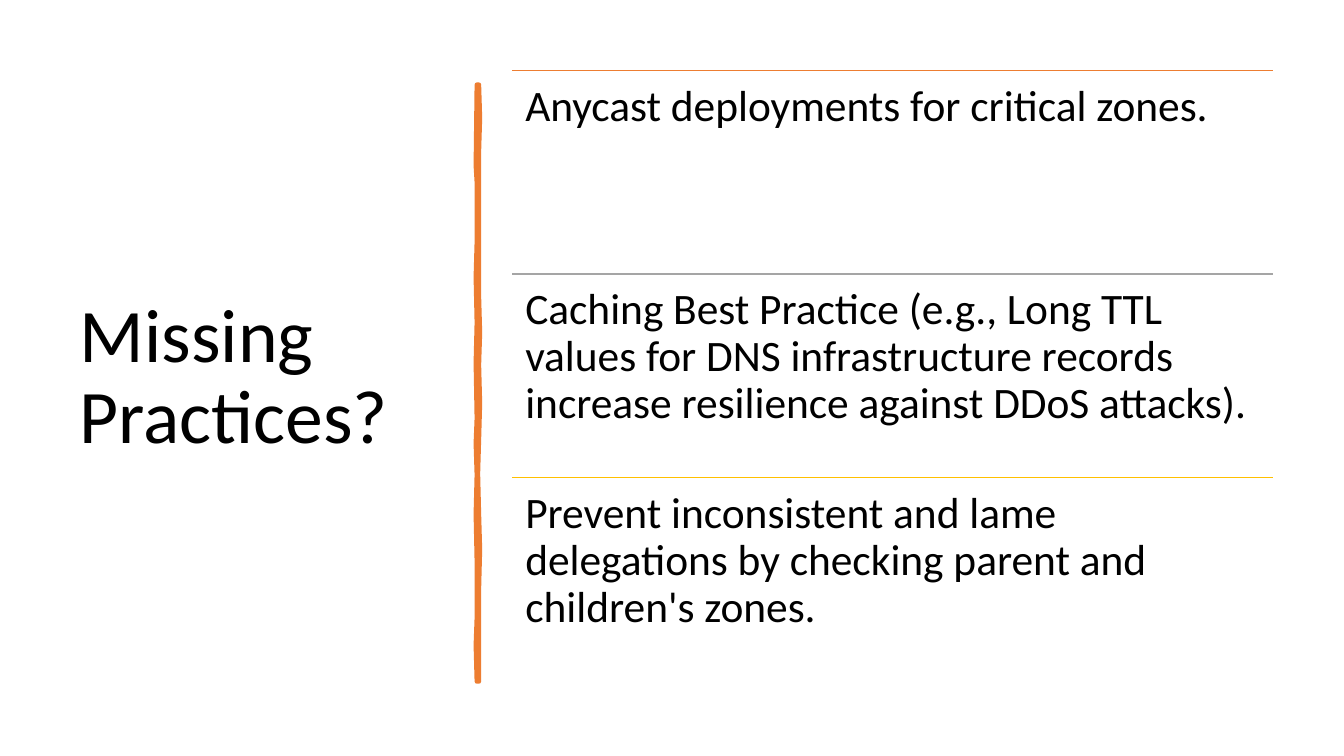
"""Build the Missing Practices slide with three ruled statements."""
from dataclasses import dataclass

from lxml import etree
from pptx import Presentation
from pptx.dml.color import RGBColor
from pptx.enum import shapes, text
from pptx.oxml import ns
from pptx.util import Inches, Pt

TITLE = "Missing Practices?"
PRACTICES = [
    ("Anycast deployments for critical zones.", "ED7D31"),
    ("Caching Best Practice (e.g., Long TTL values for DNS infrastructure records "
     "increase resilience against DDoS attacks).", "A5A5A5"),
    ("Prevent inconsistent and lame delegations by checking parent and "
     "children's zones.", "FFC000"),
]
RIGHT_EDGE = [(4.75, 0.84), (4.76, 1.17), (4.75, 1.5), (4.75, 2.26), (4.75, 2.94),
              (4.76, 3.3), (4.75, 3.62), (4.76, 4), (4.75, 4.36), (4.74, 4.7),
              (4.75, 5.1), (4.76, 5.45), (4.75, 5.84), (4.75, 6.76)]
LEFT_EDGE = [(4.73, 6.76), (4.72, 6.4), (4.73, 6.13), (4.73, 5.57), (4.72, 5.1),
             (4.73, 4.71), (4.72, 4.4), (4.73, 4.15), (4.72, 3.6), (4.73, 3.2),
             (4.72, 2.75), (4.73, 2.4), (4.73, 1.81), (4.72, 1.64), (4.73, 0.84)]


@dataclass(frozen=True)
class Theme:
    """Colours, font and type sizes."""
    font: str = "Calibri"
    ink: str = "000000"
    accent: str = "ED7D31"
    title_size: int = 54
    body_size: int = 31
    brush_width: float = 3.25
    rule_width: float = 1


THEME = Theme()
LIST_LEFT, LIST_TOP, LIST_WIDTH, ROW_HEIGHT = 5.08, 0.7, 7.55, 2.02
INSET = 0.13


def write(box, words, size, anchor):
    """Put one styled paragraph into a box."""
    frame = box.text_frame
    frame.text = words
    frame.word_wrap = True
    frame.auto_size = text.MSO_AUTO_SIZE.NONE
    frame.vertical_anchor = anchor
    para = frame.paragraphs[0]
    para.alignment = text.PP_ALIGN.LEFT
    para.line_spacing = 0.9
    font = para.runs[0].font
    font.name, font.size = THEME.font, Pt(size)
    font.color.rgb = RGBColor.from_string(THEME.ink)


def add_title(page):
    """Place the slide title at the left."""
    title = page.shapes.title
    title.left, title.top = Inches(0.69), Inches(0.7)
    title.width, title.height = Inches(3.74), Inches(6.11)
    write(title, TITLE, THEME.title_size, text.MSO_ANCHOR.MIDDLE)


def add_brush_stroke(page):
    """Draw the uneven vertical divider."""
    points = [(round(x * 100), round(y * 100)) for x, y in RIGHT_EDGE + LEFT_EDGE]
    builder = page.shapes.build_freeform(*points[0], scale=Inches(0.01))
    builder.add_line_segments(points[1:], close=True)
    stroke = builder.convert_to_shape()
    stroke.shadow.inherit = False
    stroke.fill.solid()
    stroke.fill.fore_color.rgb = RGBColor.from_string(THEME.accent)
    stroke.line.color.rgb = RGBColor.from_string(THEME.accent)
    stroke.line.width = Pt(THEME.brush_width)


def add_practice(page, row, words, colour):
    """Add a coloured rule with its statement below."""
    left, top = Inches(LIST_LEFT), Inches(LIST_TOP + row * ROW_HEIGHT)
    width = Inches(LIST_WIDTH)
    rule = page.shapes.add_connector(
        shapes.MSO_CONNECTOR.STRAIGHT, left, top, left + width, top)
    rule.line.color.rgb = RGBColor.from_string(colour)
    rule.line.width = Pt(THEME.rule_width)
    etree.SubElement(rule._element.spPr, ns.qn("a:effectLst"))
    box = page.shapes.add_textbox(left, top, width, Inches(ROW_HEIGHT))
    frame = box.text_frame
    frame.margin_left = frame.margin_right = Inches(INSET)
    frame.margin_top = frame.margin_bottom = Inches(INSET)
    write(box, words, THEME.body_size, text.MSO_ANCHOR.TOP)


def main():
    """Assemble and save the deck."""
    deck = Presentation()
    deck.slide_width, deck.slide_height = Inches(13.33), Inches(7.5)
    page = deck.slides.add_slide(deck.slide_layouts[5])
    add_title(page)
    add_brush_stroke(page)
    for row, (words, colour) in enumerate(PRACTICES):
        add_practice(page, row, words, colour)
    deck.save("out.pptx")


if __name__ == "__main__":
    main()
